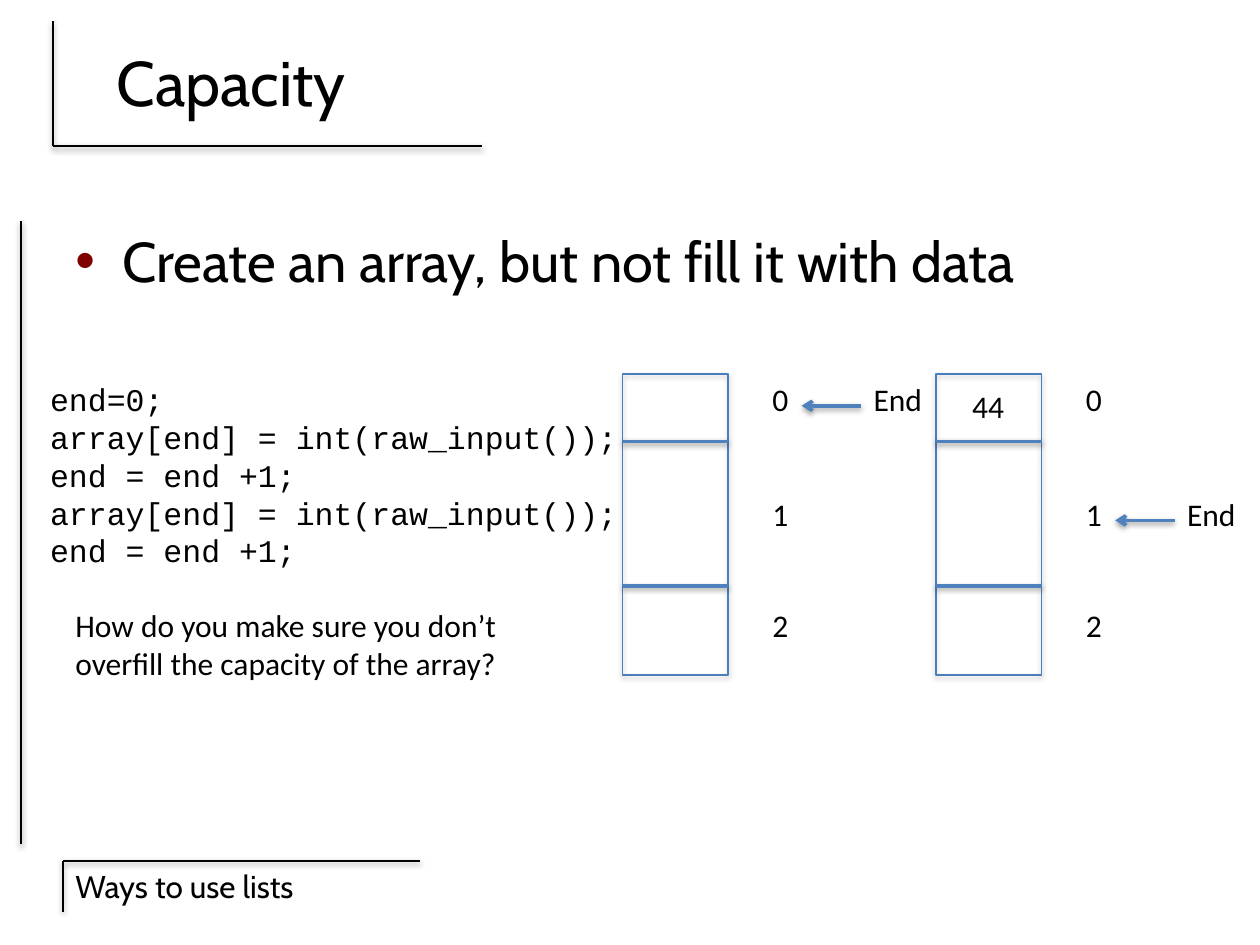
from dataclasses import dataclass

from pptx import Presentation
from pptx.dml.color import RGBColor
from pptx.enum.shapes import MSO_CONNECTOR as Connector, MSO_SHAPE as Preset
from pptx.enum.text import MSO_ANCHOR as Anchor, MSO_AUTO_SIZE as AutoSize, PP_ALIGN as Align
from pptx.oxml import parse_xml
from pptx.oxml.ns import nsdecls
from pptx.util import Cm, Pt


@dataclass(frozen=True)
class Theme:
    ink: str = "000000"
    bullet: str = "800000"
    cell_edge: str = "4B7EBC"
    accent: str = "4F81BD"
    heading_font: str = "Cabin"
    label_font: str = "Calibri"
    code_font: str = "Courier New"
    title_size: int = 36
    body_size: int = 32
    text_size: int = 18
    rule_width: float = 1
    edge_width: float = 0.75
    accent_width: float = 2


THEME = Theme()
LABEL_HEIGHT = 1.02
INDEX_TOPS = (0, 2.31, 4.55)
DIVIDER_TOPS = (1.36, 4.27)


def add_shadow(shape, opacity=38):
    """Give a shape or connector a soft shadow straight below it."""
    shape._element.spPr.append(parse_xml(
        f'<a:effectLst {nsdecls("a")}>'
        '<a:outerShdw blurRad="40000" dist="20000" dir="5400000" rotWithShape="0">'
        f'<a:srgbClr val="{THEME.ink}"><a:alpha val="{opacity * 1000}"/></a:srgbClr>'
        '</a:outerShdw></a:effectLst>'))


def add_line(page, start, end, color=THEME.ink, width=THEME.rule_width, arrow=False):
    line = page.shapes.add_connector(Connector.STRAIGHT, *map(Cm, (*start, *end)))
    line.line.color.rgb = RGBColor.from_string(color)
    line.line.width = Pt(width)
    if arrow:
        line.line._get_or_add_ln().append(
            parse_xml(f'<a:tailEnd {nsdecls("a")} type="arrow"/>'))
    add_shadow(line)


def add_text(page, box, lines, font=THEME.label_font, size=THEME.text_size, **layout):
    """Write one paragraph per line; layout overrides the frame's defaults."""
    frame = page.shapes.add_textbox(*map(Cm, box)).text_frame
    frame_format = {"word_wrap": False, "auto_size": AutoSize.NONE,
                    "vertical_anchor": Anchor.TOP} | layout
    for name, value in frame_format.items():
        setattr(frame, name, value)
    span_format = {"name": font, "size": Pt(size)}
    for number, line in enumerate(lines):
        para = frame.add_paragraph() if number else frame.paragraphs[0]
        span = para.add_run()
        span.text = line
        for name, value in span_format.items():
            setattr(span.font, name, value)
        span.font.color.rgb = RGBColor.from_string(THEME.ink)
    return frame


def add_title(page, box, text):
    left, top, width, height = box
    corner = (left - 0.2, top + height + 0.11)
    add_line(page, (left + 8.45, corner[1]), corner)
    add_line(page, (corner[0], top), corner)
    frame = add_text(page, box, [text], THEME.heading_font, THEME.title_size,
                     word_wrap=True, vertical_anchor=Anchor.MIDDLE)
    frame.paragraphs[0].alignment = Align.CENTER


def add_body(page, box, text):
    left, top, _, height = box
    add_line(page, (left - 0.84, top), (left - 0.84, top + height))
    frame = add_text(page, box, [text], THEME.heading_font, THEME.body_size, word_wrap=True)
    # Hanging bullet
    props = frame.paragraphs[0]._p.get_or_add_pPr()
    props.set("marL", str(Cm(0.95)))
    props.set("indent", str(-Cm(0.95)))
    for tag in (f'<a:buClr {nsdecls("a")}><a:srgbClr val="{THEME.bullet}"/></a:buClr>',
                f'<a:buFont {nsdecls("a")} typeface="Arial"/>',
                f'<a:buChar {nsdecls("a")} char="•"/>'):
        props.append(parse_xml(tag))


def add_footer(page, box, text):
    left, top, _, height = box
    add_line(page, (left + 7.19, top), (left, top))
    add_line(page, (left, top), (left, top + height))
    add_text(page, box, [text], THEME.heading_font, word_wrap=True)


def add_array(page, box, end_index, first_value=None):
    """Draw an array with its indices and an arrow marking where it ends."""
    left, top, width, height = box
    cells = page.shapes.add_shape(Preset.RECTANGLE, *map(Cm, box))
    cells.fill.background()
    cells.line.color.rgb = RGBColor.from_string(THEME.cell_edge)
    cells.line.width = Pt(THEME.edge_width)
    add_shadow(cells, 35)
    for offset in DIVIDER_TOPS:
        add_line(page, (left, top + offset), (left + width, top + offset),
                 THEME.accent, THEME.accent_width)

    # Indices beside the cells
    for index, offset in enumerate(INDEX_TOPS):
        add_text(page, (left + 2.77, top + offset, 0.84, LABEL_HEIGHT), [str(index)])

    # End marker
    marker_left, marker_top = left + 4.81, top + INDEX_TOPS[end_index]
    add_line(page, (marker_left, marker_top + 0.64), (left + 3.61, marker_top + 0.64),
             THEME.accent, THEME.accent_width, arrow=True)
    add_text(page, (marker_left, marker_top, 1.5, LABEL_HEIGHT), ["End"])

    if first_value:
        add_text(page, (left + 0.48, top + 0.13, 1.17, LABEL_HEIGHT), [first_value])


def main():
    deck = Presentation()
    deck.slide_width, deck.slide_height = Cm(25.4), Cm(19.05)
    page = deck.slides.add_slide(deck.slide_layouts[6])

    # Slide frame
    add_footer(page, (1.27, 17.35, 6.15, 1.03), "Ways to use lists")
    add_title(page, (1.27, 0.43, 6.78, 2.41), "Capacity")
    add_body(page, (1.27, 4.45, 22.86, 12.57), "Create an array, but not fill it with data")

    # Code and question
    append_step = ["array[end] = int(raw_input());", "end = end +1;"]
    add_text(page, (0.76, 7.54, 12.07, 4.88), ["end=0;"] + append_step * 2, THEME.code_font)
    add_text(page, (1.27, 12.09, 9.09, 1.8),
             ["How do you make sure you don’t", "overfill the capacity of the array?"])

    # Array before and after the first append
    add_array(page, (12.55, 7.54, 2.13, 6.07), end_index=0)
    add_array(page, (18.87, 7.54, 2.13, 6.07), end_index=1, first_value="44")

    deck.save("out.pptx")


if __name__ == "__main__":
    main()
